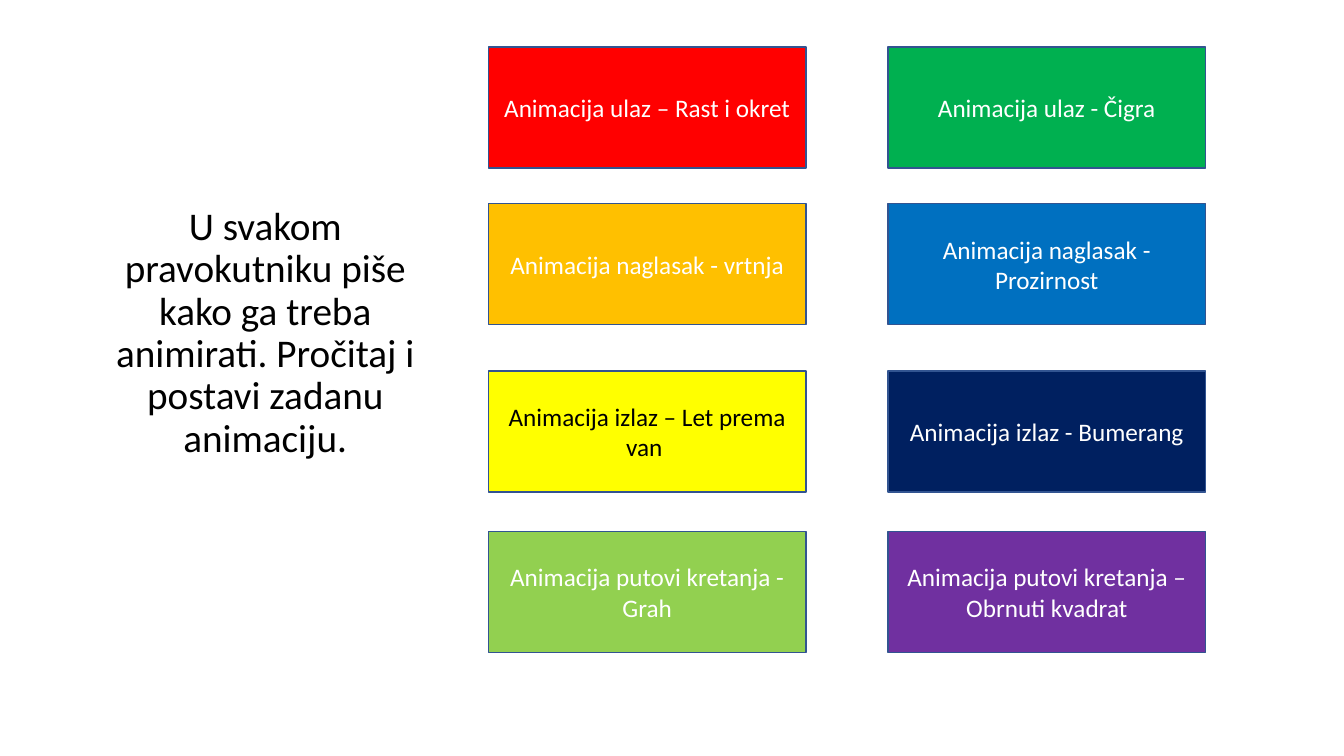
"""Build a slide with a task text and eight coloured rectangles naming animations."""
import pptx
import pptx.dml.color
import pptx.enum.shapes
import pptx.enum.text
import pptx.util

Cm = pptx.util.Cm
Pt = pptx.util.Pt
RGBColor = pptx.dml.color.RGBColor
CENTER = pptx.enum.text.PP_ALIGN.CENTER
MIDDLE = pptx.enum.text.MSO_ANCHOR.MIDDLE
RECT = pptx.enum.shapes.MSO_SHAPE.RECTANGLE

WHITE = RGBColor(0xFF, 0xFF, 0xFF)
BLACK = RGBColor(0x00, 0x00, 0x00)
EDGE = RGBColor(0x32, 0x54, 0x91)
RED = RGBColor(0xFF, 0x00, 0x00)
GREEN = RGBColor(0x00, 0xB0, 0x50)
ORANGE = RGBColor(0xFF, 0xC0, 0x00)
BLUE = RGBColor(0x00, 0x70, 0xC0)
YELLOW = RGBColor(0xFF, 0xFF, 0x00)
NAVY = RGBColor(0x00, 0x20, 0x60)
LIME = RGBColor(0x92, 0xD0, 0x50)
PURPLE = RGBColor(0x70, 0x30, 0xA0)


def write(shape, text, size, color):
    frame = shape.text_frame
    frame.word_wrap = True
    para = frame.paragraphs[0]
    para.alignment = CENTER
    run = para.add_run()
    run.text = text
    run.font.name = "Calibri"
    run.font.size = Pt(size)
    run.font.color.rgb = color
    return para


deck = pptx.Presentation()
deck.slide_width = Cm(33.87)
deck.slide_height = Cm(19.05)
slide = deck.slides.add_slide(deck.slide_layouts[6])

task = slide.shapes.add_textbox(Cm(2.34), Cm(5.08), Cm(8.69), Cm(12.09))
para = write(
    task,
    "U svakom pravokutniku piše kako ga treba animirati. "
    "Pročitaj i postavi zadanu animaciju.",
    28,
    BLACK,
)
para.line_spacing = 0.9
para.space_before = Pt(10)

lefts = (12.31, 22.38)
rows = [
    (1.19, [("Animacija ulaz – Rast i okret", RED, WHITE),
            ("Animacija ulaz - Čigra", GREEN, WHITE)]),
    (5.13, [("Animacija naglasak - vrtnja", ORANGE, WHITE),
            ("Animacija naglasak - Prozirnost", BLUE, WHITE)]),
    (9.35, [("Animacija izlaz – Let prema van ", YELLOW, BLACK),
            ("Animacija izlaz - Bumerang", NAVY, WHITE)]),
    (13.39, [("Animacija putovi kretanja - Grah", LIME, WHITE),
             ("Animacija putovi kretanja – Obrnuti kvadrat", PURPLE, WHITE)]),
]

for top, cards in rows:
    for left, (text, fill, ink) in zip(lefts, cards):
        card = slide.shapes.add_shape(RECT, Cm(left), Cm(top), Cm(8), Cm(3.05))
        card.shadow.inherit = False
        card.fill.solid()
        card.fill.fore_color.rgb = fill
        card.line.color.rgb = EDGE
        card.line.width = Pt(1)
        card.text_frame.vertical_anchor = MIDDLE
        write(card, text, 18, ink)

deck.save("out.pptx")
